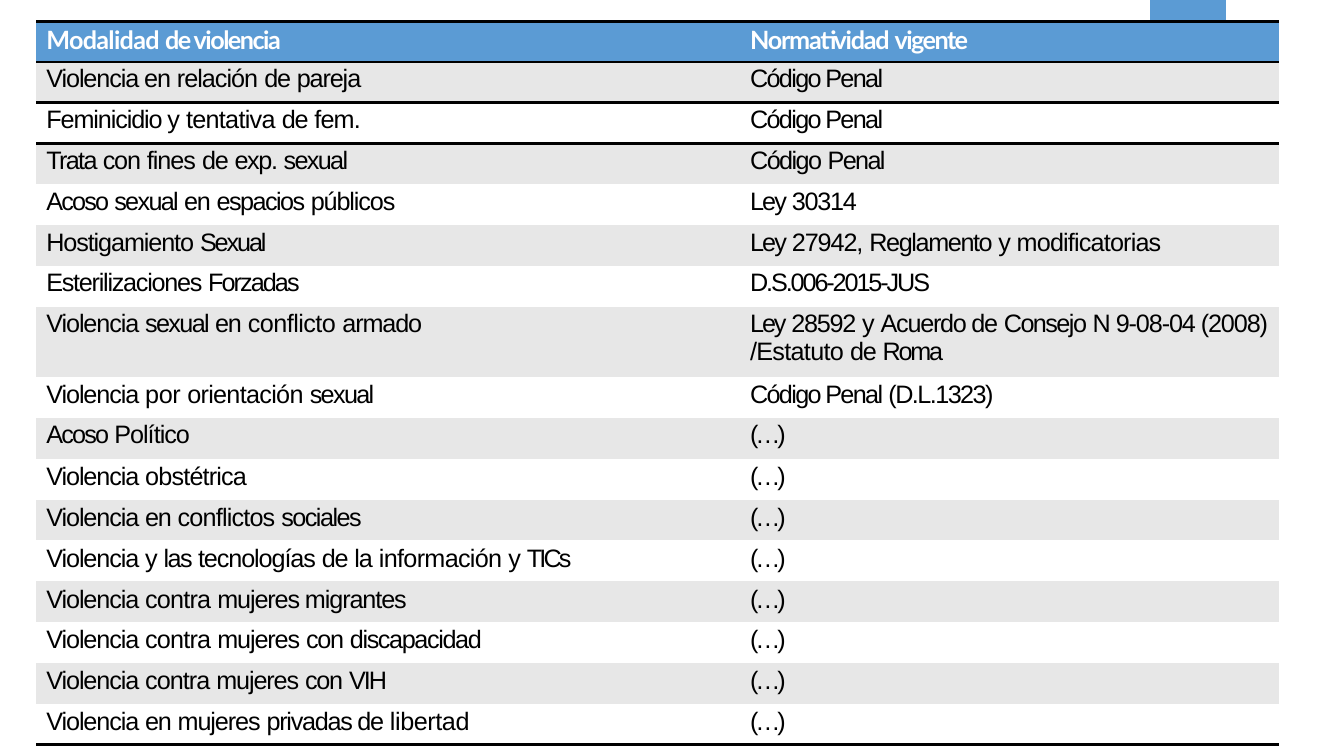
from dataclasses import dataclass

from lxml.etree import SubElement
from pptx import Presentation
from pptx.dml.color import RGBColor as Color
from pptx.oxml import parse_xml
from pptx.oxml.ns import nsdecls, qn
from pptx.slide import Slide
from pptx.table import Table, _Cell as Cell
from pptx.util import Inches, Length, Pt


@dataclass(frozen=True)
class Theme:
    header_fill: str = "5B9BD4"
    band_fill: str = "E7E7E7"
    plain_fill: str = "FFFFFF"
    header_text: str = "FFFFFF"
    body_text: str = "000000"
    rule: str = "000000"
    rule_width: float = 2.25
    header_font: str = "Lato"
    body_font: str = "Arial"
    text_size: float = 18
    empty_size: float = 8
    no_style: str = "{2D5ABB26-0587-4C30-8999-92F81FD0307C}"


@dataclass(frozen=True)
class Grid:
    width: Length = Inches(13.33)
    height: Length = Inches(7.5)
    columns: int = 1333
    rows: int = 750

    def across(self, units: float) -> Length:
        return Length(round(self.width * units / self.columns))

    def down(self, units: float) -> Length:
        return Length(round(self.height * units / self.rows))


@dataclass(frozen=True)
class Span:
    text: str
    spacing: float = -0.8


Line = tuple[Span, ...]


@dataclass(frozen=True)
class Entry:
    violence: Line
    norm: tuple[Line, ...] = ((Span("(…)", -2.2),),)
    merged: int = 1


THEME = Theme()
GRID = Grid()
TABLE_LEFT = 36
COLUMN_WIDTHS = (615, 490, 75, 53)
TAB_HEIGHT = 21
ROW_HEIGHT = 40.5
TALL_ROW_HEIGHT = 70
INDENTS = (10, 93)
RULED_BELOW = {0, 1, 2, 17}
LOWERED_FROM = 11
TAB_COLUMN = 2

PENAL_CODE = ((Span("Código Penal", -1.2),),)
VIOLENCE = Span("Violencia ")
SEXUAL = Span("sexual ", -1.2)
DE = Span("de ", -0.9)
EN = Span("en ", -0.9)
CON = Span("con ", -0.9)
Y = Span("y ", -0.9)
LEY = Span("Ley ", -1.4)
CONTRA = Span("contra ", -0.6)
WOMEN = Span("mujeres ")

ENTRIES = (
    Entry((Span("Modalidad ", -0.5), Span("de violencia", -1.1)),
          ((Span("Normatividad ", -0.9), Span("vigente", -1.1)),)),
    Entry((Span("Violencia en "), Span("relación ", -0.7), DE, Span("pareja")), PENAL_CODE),
    Entry((Span("Feminicidio y "), Span("tentativa ", -0.5), DE, Span("fem.", -0.6)), PENAL_CODE),
    Entry((Span("Trata ", -1.2), CON, Span("fines ", -0.7), DE, Span("exp. ", -1),
           Span("sexual", -1.2)),
          ((Span("Código ", -1.1), Span("Penal", -1.2)),)),
    Entry((Span("Acoso ", -1.3), SEXUAL, EN, Span("espacios ", -1.1), Span("públicos")),
          ((LEY, Span("30314", -0.9)),)),
    Entry((Span("Hostigamiento "), Span("Sexual", -1.5)),
          ((LEY, Span("27942, "), Span("Reglamento ", -1), Y, Span("modificatorias", -0.6)),), 2),
    Entry((Span("Esterilizaciones ", -0.9), Span("Forzadas", -1.4)),
          ((Span("D.S.006-2015-JUS", -1.5),),)),
    Entry((VIOLENCE, SEXUAL, Span("en "), Span("conflicto ", -0.4), Span("armado")),
          ((Span("Ley ", -1.5), Span("28592 ", -0.9), Span("y "), Span("Acuerdo de ", -0.9),
            Span("Consejo ", -1.1), Span("N ", -1.4), Span("9-08-04 (2008)")),
           (Span("/Estatuto ", -0.5), DE, Span("Roma", -1.6))), 3),
    Entry((VIOLENCE, Span("por ", -0.3), Span("orientación ", -0.5), Span("sexual", -1.2)),
          ((Span("Código Penal ", -1.2), Span("(D.L.1323)", -1.1)),)),
    Entry((Span("Acoso ", -1.3), Span("Político", -0.7))),
    Entry((VIOLENCE, Span("obstétrica", -0.6))),
    Entry((VIOLENCE, EN, Span("conflictos ", -0.6), Span("sociales", -1.1))),
    Entry((VIOLENCE, Y, Span("las ", -1.1), Span("tecnologías "), DE, Span("la ", -0.7),
           Span("información ", -0.5), Y, Span("TICs", -2))),
    Entry((VIOLENCE, CONTRA, Span("mujeres migrantes"))),
    Entry((VIOLENCE, CONTRA, WOMEN, CON, Span("discapacidad", -1))),
    Entry((VIOLENCE, Span("contra ", -0.7), WOMEN, CON, Span("VIH", -1.4))),
    Entry((VIOLENCE, EN, WOMEN, Span("privadas de ", -0.9), Span("libertad", -0.3))),
)


def add_rule(cell: Cell, side: str) -> None:
    rule = parse_xml(
        f'<a:{side} {nsdecls("a")} w="{Pt(THEME.rule_width)}"><a:solidFill>'
        f'<a:srgbClr val="{THEME.rule}"/></a:solidFill></a:{side}>'
    )
    cell._tc.get_or_add_tcPr().insert(0, rule)


def style_cell(cell: Cell, row: int, column: int) -> None:
    cell.margin_left = cell.margin_right = cell.margin_bottom = 0
    cell.margin_top = 0 if row == 0 else GRID.down(4 if row >= LOWERED_FROM else 3)
    if row == 0 and column != TAB_COLUMN:
        cell.fill.background()
    else:
        body = THEME.plain_fill if row % 2 else THEME.band_fill
        cell.fill.solid()
        cell.fill.fore_color.rgb = Color.from_string(THEME.header_fill if row < 2 else body)
    if row in RULED_BELOW:
        add_rule(cell, "lnB")
    if row - 1 in RULED_BELOW:
        add_rule(cell, "lnT")
    ending = SubElement(cell.text_frame.paragraphs[0]._p, qn("a:endParaRPr"))
    ending.set("sz", str(round(THEME.empty_size * 100)))


def write_lines(cell: Cell, lines: tuple[Line, ...], indent: int, header: bool) -> None:
    frame = cell.text_frame
    for index, line in enumerate(lines):
        para = frame.add_paragraph() if index else frame.paragraphs[0]
        para._p.get_or_add_pPr().set("marL", str(GRID.across(indent)))
        for span in line:
            run = para.add_run()
            run.text = span.text
            font = run.font
            font.name = THEME.header_font if header else THEME.body_font
            font.size = Pt(THEME.text_size)
            font.bold = header
            font.color.rgb = Color.from_string(THEME.header_text if header else THEME.body_text)
            run._r.get_or_add_rPr().set("spc", str(round(span.spacing * 100)))


def fill_entry(table: Table, row: int, entry: Entry) -> None:
    for column, lines in enumerate(((entry.violence,), entry.norm)):
        write_lines(table.cell(row, column), lines, INDENTS[column], row == 1)
    if entry.merged > 1:
        table.cell(row, 1).merge(table.cell(row, entry.merged))


def add_norms_table(page: Slide) -> None:
    heights = [TAB_HEIGHT] + [
        TALL_ROW_HEIGHT if len(entry.norm) > 1 else ROW_HEIGHT for entry in ENTRIES
    ]
    frame = page.shapes.add_table(
        len(heights), len(COLUMN_WIDTHS), GRID.across(TABLE_LEFT), 0,
        GRID.across(sum(COLUMN_WIDTHS)), GRID.down(sum(heights)),
    )
    table = frame.table
    table.first_row = table.horz_banding = False
    table._tbl.tblPr.find(qn("a:tableStyleId")).text = THEME.no_style
    for column, width in zip(table.columns, COLUMN_WIDTHS):
        column.width = GRID.across(width)
    for row, height in enumerate(heights):
        table.rows[row].height = GRID.down(height)
        for column in range(len(COLUMN_WIDTHS)):
            style_cell(table.cell(row, column), row, column)
    table.cell(0, 0).merge(table.cell(0, 1))
    for row, entry in enumerate(ENTRIES, start=1):
        fill_entry(table, row, entry)


def main() -> None:
    deck = Presentation()
    deck.slide_width, deck.slide_height = GRID.width, GRID.height
    page = deck.slides.add_slide(deck.slide_layouts[6])
    add_norms_table(page)
    deck.save("out.pptx")


if __name__ == "__main__":
    main()
